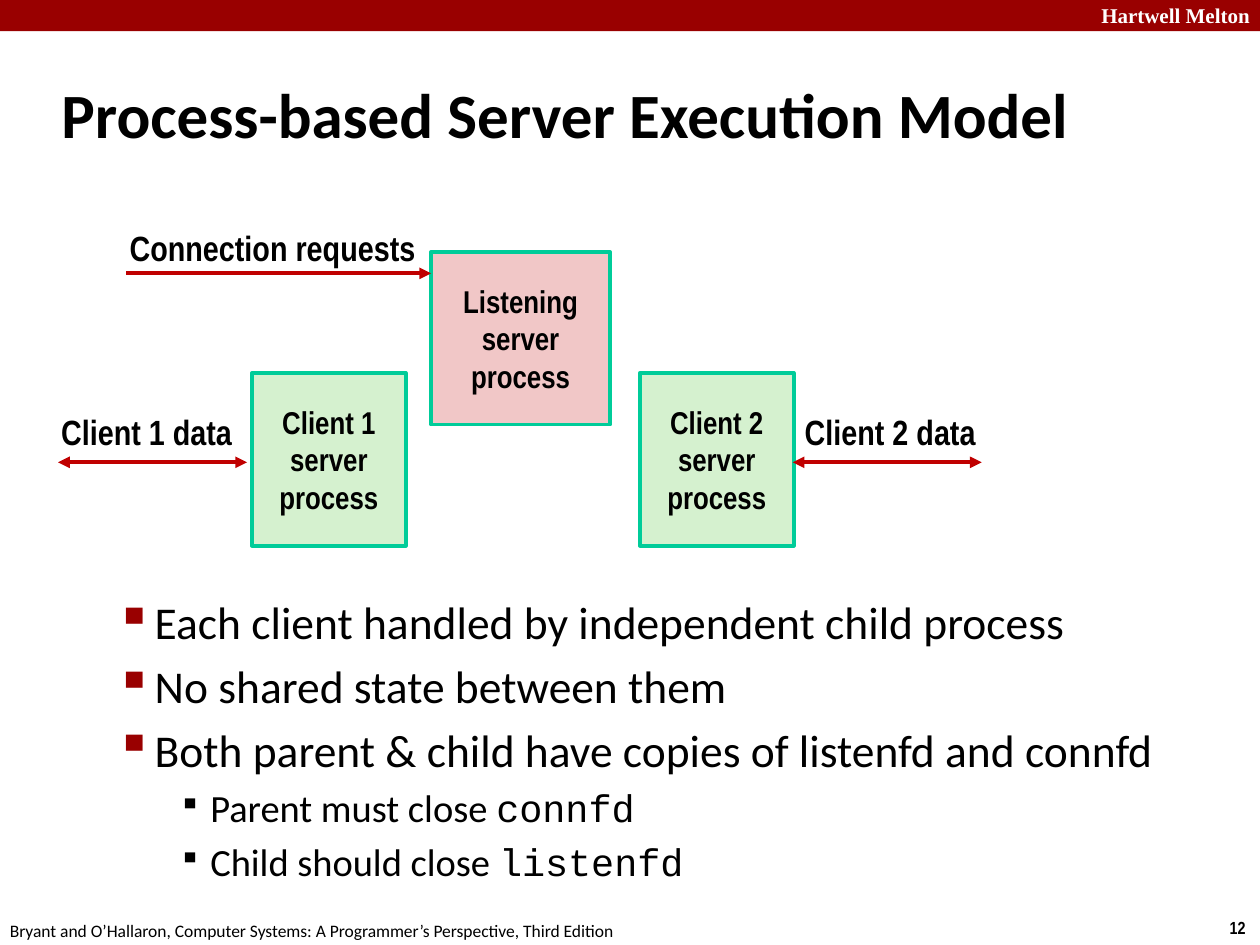
from lxml import etree
from pptx import Presentation
from pptx.dml.color import RGBColor
from pptx.enum.shapes import MSO_CONNECTOR, MSO_SHAPE
from pptx.enum.text import MSO_ANCHOR, MSO_AUTO_SIZE, PP_ALIGN
from pptx.oxml.ns import qn
from pptx.util import Cm, Pt

LEFT, MID, RIGHT = PP_ALIGN.LEFT, PP_ALIGN.CENTER, PP_ALIGN.RIGHT
TOP, CENTRE = MSO_ANCHOR.TOP, MSO_ANCHOR.MIDDLE
GROW = MSO_AUTO_SIZE.SHAPE_TO_FIT_TEXT
RECT, LINE = MSO_SHAPE.RECTANGLE, MSO_CONNECTOR.STRAIGHT

SANS, NARROW, CODE, SERIF = "Calibri", "Arial Narrow", "Courier New", "Times New Roman"
INK = {"black": "000000", "white": "FFFFFF", "brand": "990000", "arrow": "C00000",
       "edge": "00CC99", "green": "D5F1CF", "pink": "F1C7C7"}

# All lengths below are in centimetres.
TITLE = "Process-based Server Execution Model"
SCHOOL = "Hartwell Melton"
SOURCE = "Bryant and O’Hallaron, Computer Systems: A Programmer’s Perspective, Third Edition"
PAGE = "12"

BOX_H = 3.48
BOXES = [  # first line, left, top, width, fill
    ("Client 1", 5.08, 7.52, 3.1, "green"),
    ("Client 2", 12.9, 7.52, 3.1, "green"),
    ("Listening", 8.69, 5.08, 3.61, "pink"),
]
LABELS = [  # text, left, top, width
    ("Connection requests", 2.31, 4.45, 6.32),
    ("Client 1 data", 0.94, 8.15, 3.99),
    ("Client 2 data", 15.93, 8.15, 3.99),
]
ARROWS = [  # from x, to x, y, ends with a head
    (2.54, 8.69, 5.51, ["tailEnd"]),
    (1.17, 4.98, 9.32, ["headEnd", "tailEnd"]),
    (19.79, 15.98, 9.32, ["headEnd", "tailEnd"]),
]
POINTS = [  # level, text, code
    (1, "Each client handled by independent child process", ""),
    (1, "No shared state between them", ""),
    (1, "Both parent & child have copies of listenfd and connfd", ""),
    (2, "Parent must close ", "connfd"),
    (2, "Child should close ", "listenfd"),
]
LEVELS = {  # font size, indent, hang, bullet percent, bullet colour
    1: (26, 2.06, 0.79, 110, "brand"),
    2: (22, 3.18, 0.64, 80, "black"),
}


def tint(name):
    return RGBColor.from_string(INK[name])


def style(font, face, size, bold=False, color="black"):
    font.name, font.size, font.bold = face, Pt(size), bold
    font.color.rgb = tint(color)


def add_text(slide, text, x, y, w, h, face, size, bold=False, color="black",
             align=LEFT, anchor=TOP, wrap=False, grow=True):
    frame = slide.shapes.add_textbox(Cm(x), Cm(y), Cm(w), Cm(h)).text_frame
    frame.word_wrap, frame.vertical_anchor = wrap, anchor
    if grow:
        frame.auto_size = GROW
    para = frame.paragraphs[0]
    para.text, para.alignment = text, align
    style(para.font, face, size, bold, color)


def add_rect(slide, x, y, w, h, fill, edge=None):
    rect = slide.shapes.add_shape(RECT, Cm(x), Cm(y), Cm(w), Cm(h))
    rect.shadow.inherit = False
    rect.fill.solid()
    rect.fill.fore_color.rgb = tint(fill)
    if edge:
        rect.line.color.rgb = tint(edge)
        rect.line.width = Pt(2.25)
    else:
        rect.line.fill.background()
    return rect


def add_box(slide, name, x, y, w, fill):
    frame = add_rect(slide, x, y, w, BOX_H, fill, "edge").text_frame
    frame.word_wrap, frame.vertical_anchor = False, CENTRE
    frame.text = "\n".join([name, "server", "process"])
    for para in frame.paragraphs:
        para.alignment = MID
        style(para.font, NARROW, 18, True)


def add_arrow(slide, start, end, y, heads):
    arrow = slide.shapes.add_connector(LINE, Cm(start), Cm(y), Cm(end), Cm(y))
    arrow.line.color.rgb = tint("arrow")
    arrow.line.width = Pt(2.25)
    for head in heads:
        etree.SubElement(arrow.line._get_or_add_ln(), qn("a:" + head), type="triangle")
    etree.SubElement(arrow._element.spPr, qn("a:effectLst"))


def add_bullet(para, indent, hang, percent, color):
    props = para._p.get_or_add_pPr()
    props.set("marL", str(Cm(indent)))
    props.set("indent", str(-Cm(hang)))
    shade = etree.SubElement(props, qn("a:buClr"))
    etree.SubElement(shade, qn("a:srgbClr"), val=INK[color])
    etree.SubElement(props, qn("a:buSzPct"), val=str(percent * 1000))
    etree.SubElement(props, qn("a:buChar"), char="▪")


def add_points(slide, x, y, w, h):
    frame = slide.shapes.add_textbox(Cm(x), Cm(y), Cm(w), Cm(h)).text_frame
    frame.word_wrap = True
    for i, (level, text, code) in enumerate(POINTS):
        para = frame.add_paragraph() if i else frame.paragraphs[0]
        size, *bullet = LEVELS[level]
        add_bullet(para, *bullet)
        para.level = level
        para.space_before = Pt(size * 0.2)
        style(para.font, SANS, size)
        para.add_run().text = text
        if code:
            run = para.add_run()
            run.text, run.font.name = code, CODE


def main():
    deck = Presentation()
    deck.slide_width, deck.slide_height = Cm(25.4), Cm(19.05)
    slide = deck.slides.add_slide(deck.slide_layouts[6])

    add_rect(slide, 0, 0, 25.4, 0.63, "brand")
    add_text(slide, SCHOOL, 21.95, -0.08, 3.5, 0.76, SERIF, 12, True, "white", align=RIGHT)
    add_text(slide, PAGE, 24.54, 18.36, 0.86, 0.69, NARROW, 10, True)
    add_text(slide, SOURCE, -0.05, 18.42, 12.9, 0.69, SANS, 10)
    add_text(slide, TITLE, 0.99, 1.22, 21.08, 2.11, SANS, 36, True,
             anchor=CENTRE, wrap=True, grow=False)
    add_points(slide, 0.81, 11.86, 23.09, 5.64)

    for box in BOXES:
        add_box(slide, *box)
    for text, x, y, w in LABELS:
        add_text(slide, text, x, y, w, 1.12, NARROW, 20, True, align=RIGHT)
    for arrow in ARROWS:
        add_arrow(slide, *arrow)

    deck.save("out.pptx")


if __name__ == "__main__":
    main()
